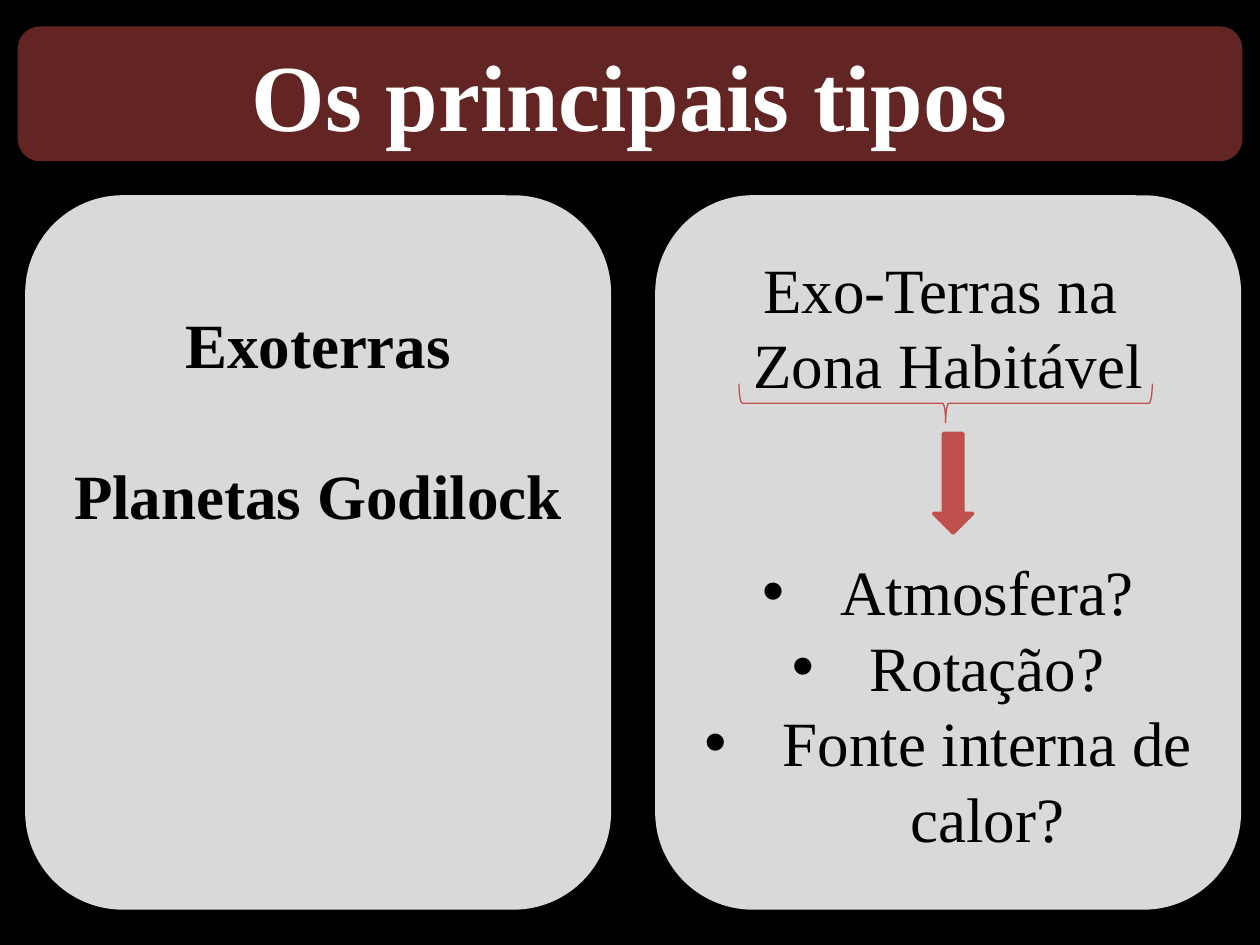
from pptx import Presentation
from pptx.dml.color import RGBColor as RGB
from pptx.enum.shapes import MSO_SHAPE as SHAPE
from pptx.enum.text import MSO_ANCHOR as ANCHOR, PP_ALIGN as ALIGN
from pptx.oxml import parse_xml
from pptx.oxml.ns import nsdecls
from pptx.util import Inches, Pt

TITLE = "Os principais tipos"
LEFT = [("Exoterras", {}), ("Planetas Godilock", {"gap": 1})]
RIGHT = [
    ("Exo-Terras na ", {}),
    ("Zona Habitável", {}),
    ("Atmosfera?", {"gap": 2, "bullet": True}),
    ("Rotação?", {"bullet": True}),
    ("Fonte interna de calor?", {"bullet": True}),
]

THEME = {
    "font": "Times New Roman",
    "back": "000000", "banner": "632523", "card": "D9D9D9",
    "accent": "C0504D", "light": "FFFFFF", "dark": "000000",
    "title": 54, "body": 36, "leading": 1.2,
}
W, H = 10, 7.5
CARD_W, CARD_H, CARD_TOP, MARGIN = 4.65, 5.67, 1.55, 0.2
COL_STEP = W / 2
LINE = THEME["body"] * THEME["leading"]
INDENT = Inches(0.62)


def color(name):
    return RGB.from_string(THEME[name])


def apply(obj, values):
    for name, value in values.items():
        setattr(obj, name, value)


def add_shape(s, kind, box, fill=None, line=None):
    sp = s.shapes.add_shape(kind, *map(Inches, box))
    sp.shadow.inherit = False
    if fill:
        sp.fill.solid()
        sp.fill.fore_color.rgb = color(fill)
    else:
        sp.fill.background()
    if line:
        sp.line.color.rgb = color(line[0])
        sp.line.width = Pt(line[1])
    else:
        sp.line.fill.background()
    return sp


def add_text(p, text, size, ink, bold):
    p.alignment = ALIGN.CENTER
    r = p.add_run()
    r.text = text
    apply(r.font, {"name": THEME["font"], "size": Pt(THEME[size]), "bold": bold})
    r.font.color.rgb = color(ink)


def add_bullet(p):
    pPr = p._p.get_or_add_pPr()
    pPr.set("marL", str(INDENT))
    pPr.set("indent", str(-INDENT))
    pPr.append(parse_xml(f'<a:buFont {nsdecls("a")} typeface="Arial"/>'))
    pPr.append(parse_xml(f'<a:buChar {nsdecls("a")} char="•"/>'))


def add_card(s, col, items, bold, frame):
    box = (MARGIN + col * COL_STEP, CARD_TOP, CARD_W, CARD_H)
    tf = add_shape(s, SHAPE.ROUNDED_RECTANGLE, box, "card").text_frame
    apply(tf, {"word_wrap": True, **frame})
    for i, (text, style) in enumerate(items):
        p = tf.add_paragraph() if i else tf.paragraphs[0]
        add_text(p, text, "body", "dark", bold)
        apply(p, {"line_spacing": Pt(LINE),
                  "space_before": Pt(LINE * style.get("gap", 0))})
        if style.get("bullet"):
            add_bullet(p)


def main():
    prs = Presentation()
    apply(prs, {"slide_width": Inches(W), "slide_height": Inches(H)})
    s = prs.slides.add_slide(prs.slide_layouts[6])
    s.background.fill.solid()
    s.background.fill.fore_color.rgb = color("back")

    banner = add_shape(s, SHAPE.ROUNDED_RECTANGLE, (0.14, 0.21, 9.72, 1.07), "banner")
    tf = banner.text_frame
    apply(tf, {"word_wrap": True, "vertical_anchor": ANCHOR.MIDDLE})
    add_text(tf.paragraphs[0], TITLE, "title", "light", True)

    add_card(s, 0, LEFT, True, {"vertical_anchor": ANCHOR.TOP,
                                "margin_top": Inches(0.05) + Pt(LINE)})
    add_card(s, 1, RIGHT, False, {"vertical_anchor": ANCHOR.MIDDLE})

    add_shape(s, SHAPE.DOWN_ARROW, (7.41, 3.44, 0.31, 0.79), "accent", ("accent", 2))
    brace = add_shape(s, SHAPE.RIGHT_BRACE, (7.35, 1.56, 0.31, 3.28),
                      line=("accent", 0.75))
    brace.rotation = 90

    prs.save("out.pptx")


if __name__ == "__main__":
    main()
